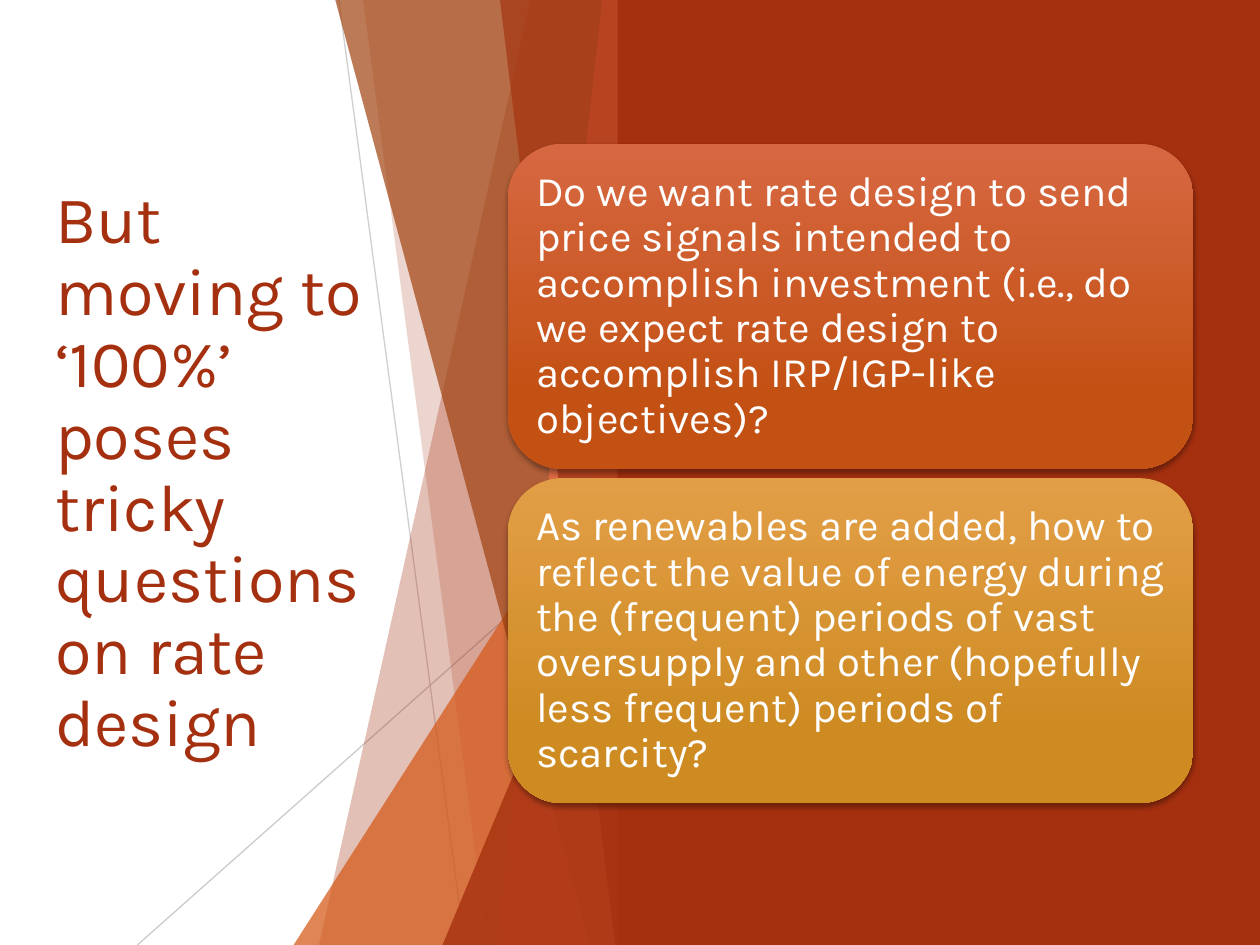
from lxml.etree import SubElement
from pptx import Presentation
from pptx.dml.color import RGBColor
from pptx.enum.shapes import MSO_CONNECTOR, MSO_SHAPE
from pptx.enum.text import MSO_ANCHOR, PP_ALIGN
from pptx.oxml.ns import qn
from pptx.util import Cm, Pt

WHITE = RGBColor(0xFF, 0xFF, 0xFF)
RED = RGBColor(0xA5, 0x30, 0x0F)
ORANGE = RGBColor(0xD5, 0x58, 0x16)
BROWN = RGBColor(0xA0, 0x42, 0x10)
CORAL = RGBColor(0xEE, 0x6E, 0x4A)
GREY = RGBColor(0xBF, 0xBF, 0xBF)
RUST_CARD = (RGBColor(0xD7, 0x67, 0x41), RGBColor(0xC3, 0x51, 0x14))
GOLD_CARD = (RGBColor(0xE2, 0x9E, 0x46), RGBColor(0xCE, 0x8B, 0x22))

WIDTH, HEIGHT = 25.4, 19.05
FACET_RIGHT = 12.7


class Page:
    """Draws on one slide; lengths are centimetres, opacity is a percentage."""

    font = "Karla"

    def __init__(self, deck):
        self.shapes = deck.slides.add_slide(deck.slide_layouts[6]).shapes

    def set_opacity(self, shape, opacity):
        color = shape.element.spPr.find(".//" + qn("a:srgbClr"))
        SubElement(color, qn("a:alpha"), val=str(opacity * 1000))

    def paint(self, shape, color, opacity=100):
        shape.shadow.inherit = False
        shape.line.fill.background()
        shape.fill.solid()
        shape.fill.fore_color.rgb = color
        if opacity < 100:
            self.set_opacity(shape, opacity)

    def block(self, left, top, width, height, color):
        shape = self.shapes.add_shape(
            MSO_SHAPE.RECTANGLE, Cm(left), Cm(top), Cm(width), Cm(height))
        self.paint(shape, color)

    def facet(self, top_x, bottom_x, color, opacity):
        """Full-height panel with a slanted left edge."""
        builder = self.shapes.build_freeform(Cm(top_x), 0)
        builder.add_line_segments([
            (Cm(FACET_RIGHT), 0),
            (Cm(FACET_RIGHT), Cm(HEIGHT)),
            (Cm(bottom_x), Cm(HEIGHT))])
        self.paint(builder.convert_to_shape(), color, opacity)

    def corner(self, left, top, color, opacity):
        """Triangle that fills the lower right corner of the facets."""
        shape = self.shapes.add_shape(
            MSO_SHAPE.ISOSCELES_TRIANGLE, Cm(left), Cm(top),
            Cm(FACET_RIGHT - left), Cm(HEIGHT - top))
        shape.adjustments[0] = 1
        self.paint(shape, color, opacity)

    def hairline(self, start, end, opacity):
        line = self.shapes.add_connector(
            MSO_CONNECTOR.STRAIGHT, *(Cm(value) for value in start + end))
        line.line.color.rgb = GREY
        line.line.width = Pt(0.75)
        self.set_opacity(line, opacity)
        SubElement(line.element.spPr, qn("a:effectLst"))

    def set_text(self, box, text, size, color):
        frame = box.text_frame
        frame.word_wrap = True
        frame.vertical_anchor = MSO_ANCHOR.MIDDLE
        para = frame.paragraphs[0]
        para.text = text
        para.alignment = PP_ALIGN.LEFT
        para.line_spacing = 0.9
        para.font.name = self.font
        para.font.size = Pt(size)
        para.font.color.rgb = color

    def title(self, left, top, width, height, text):
        box = self.shapes.add_textbox(Cm(left), Cm(top), Cm(width), Cm(height))
        self.set_text(box, text, 38, RED)

    def card(self, left, top, width, height, colors, text):
        card = self.shapes.add_shape(
            MSO_SHAPE.ROUNDED_RECTANGLE, Cm(left), Cm(top), Cm(width), Cm(height))
        card.line.fill.background()
        card.fill.gradient()
        card.fill.gradient_angle = 270
        for stop, color, position in zip(card.fill.gradient_stops, colors, (0, 0.78)):
            stop.color.rgb = color
            stop.position = position
        # Soft shadow below the card
        card.shadow.inherit = False
        shadow = SubElement(
            card.element.spPr.find(qn("a:effectLst")), qn("a:outerShdw"),
            blurRad=str(Pt(3)), dist=str(Pt(2)), dir="5400000", rotWithShape="0")
        black = SubElement(shadow, qn("a:srgbClr"), val="000000")
        SubElement(black, qn("a:alpha"), val="35000")
        frame = card.text_frame
        frame.margin_left = frame.margin_right = Cm(0.25)
        frame.margin_top = frame.margin_bottom = Cm(0.25)
        self.set_text(card, text, 24, WHITE)


def main():
    deck = Presentation()
    deck.slide_width, deck.slide_height = Cm(WIDTH), Cm(HEIGHT)
    page = Page(deck)

    # Ground and title
    page.block(0, 0, WIDTH, HEIGHT, WHITE)
    page.title(0.86, 3.86, 7.39, 11.38,
               "But moving to ‘100%’ poses tricky questions on rate design")

    # Faceted divider
    page.hairline((6.83, 0), (9.37, HEIGHT), 75)
    page.hairline((FACET_RIGHT, 10.24), (2.77, HEIGHT), 80)
    page.facet(10.69, 6.43, RED, 30)
    page.facet(7.32, 9.83, RED, 20)
    page.corner(5.92, 8.46, ORANGE, 72)
    page.facet(6.76, 11.89, BROWN, 70)
    page.facet(12.14, 10.01, CORAL, 70)
    page.facet(10.08, 12.4, RED, 65)
    page.corner(8.92, 9.98, RED, 80)

    # Red panel
    panel_left = 12.45
    page.block(panel_left, 0, WIDTH - panel_left, HEIGHT, RED)

    # Question cards
    questions = [
        (RUST_CARD, "Do we want rate design to send price signals intended to "
                    "accomplish investment (i.e., do we expect rate design to "
                    "accomplish IRP/IGP-like objectives)?"),
        (GOLD_CARD, "As renewables are added, how to reflect the value of energy "
                    "during the (frequent) periods of vast oversupply and other "
                    "(hopefully less frequent) periods of scarcity?"),
    ]
    card_height, gap = 6.55, 0.19
    for index, (colors, text) in enumerate(questions):
        top = 2.9 + index * (card_height + gap)
        page.card(10.24, top, 13.82, card_height, colors, text)

    deck.save("out.pptx")


if __name__ == "__main__":
    main()
